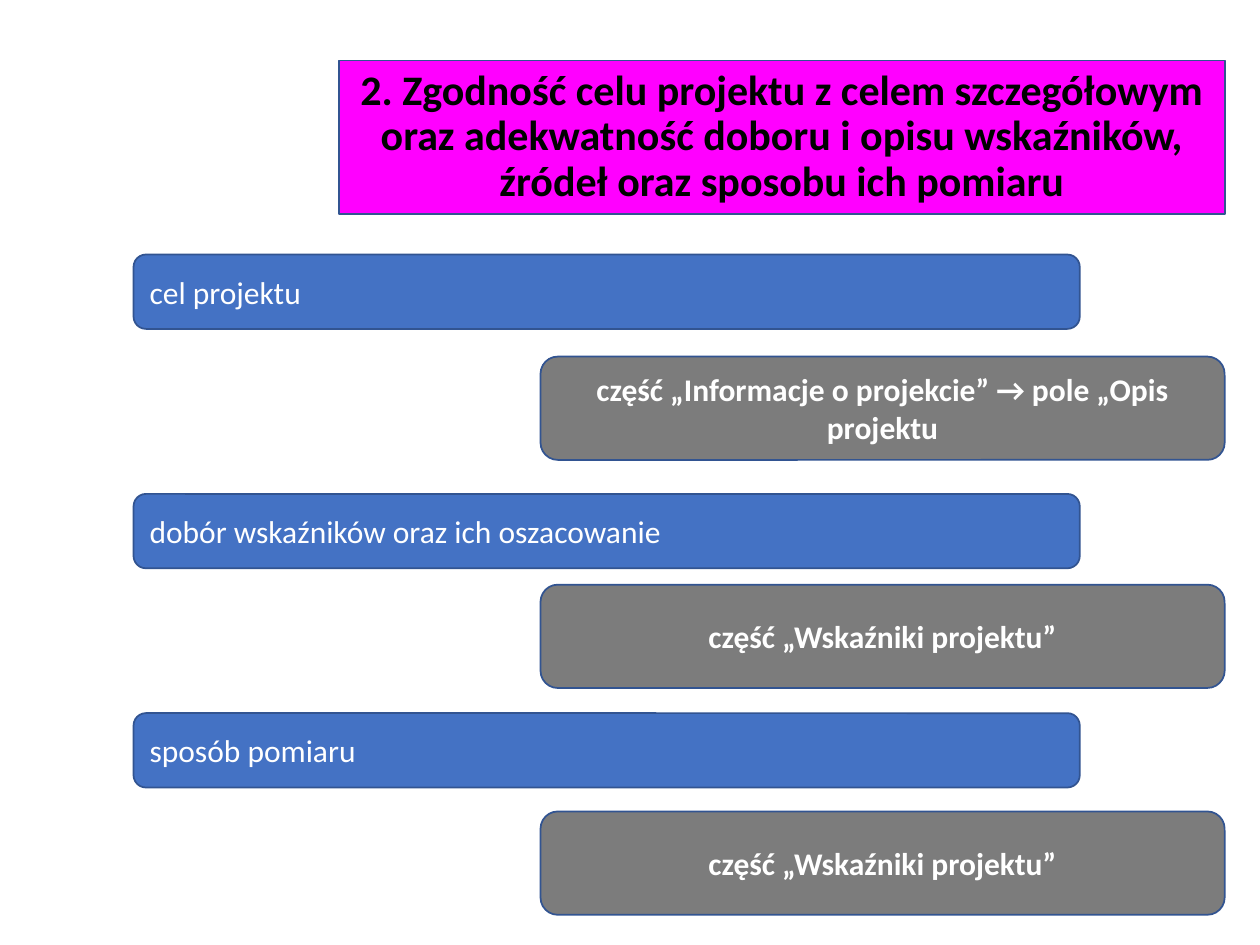
"""Build a slide that pairs each project criterion with its application section."""
from typing import NamedTuple

from lxml.etree import SubElement
from pptx import Presentation
from pptx.dml.color import RGBColor
from pptx.enum.shapes import MSO_SHAPE as Shape
from pptx.enum.text import MSO_ANCHOR as Anchor, MSO_AUTO_SIZE as AutoSize, PP_ALIGN as Align
from pptx.oxml.ns import qn
from pptx.util import Inches, Pt

BLUE = RGBColor(0x44, 0x72, 0xC4)
GRAY = RGBColor(0x7C, 0x7C, 0x7C)
MAGENTA = RGBColor(0xFF, 0x00, 0xFF)
OUTLINE = RGBColor(0x32, 0x54, 0x91)
WHITE = RGBColor(0xFF, 0xFF, 0xFF)
BLACK = RGBColor(0x00, 0x00, 0x00)
TITLE = ("2. Zgodność celu projektu z celem szczegółowym oraz adekwatność "
         "doboru i opisu wskaźników, źródeł oraz sposobu ich pomiaru")


class Style(NamedTuple):
    fill: RGBColor
    color: RGBColor
    size: int
    bold: bool
    align: Align


class Bar(NamedTuple):
    left: float
    width: float
    height: float
    style: Style


class Row(NamedTuple):
    criterion: str
    criterion_top: float
    section: str
    section_top: float


TITLE_STYLE = Style(MAGENTA, BLACK, 24, True, Align.CENTER)
CRITERION = Bar(1.06, 7.51, 0.59, Style(BLUE, WHITE, 18, False, Align.LEFT))
SECTION = Bar(4.29, 5.43, 0.82, Style(GRAY, WHITE, 18, True, Align.CENTER))
ROWS = [
    Row("cel projektu", 2.02, "część „Informacje o projekcie” → pole „Opis projektu", 2.83),
    Row("dobór wskaźników oraz ich oszacowanie", 3.92, "część „Wskaźniki projektu”", 4.64),
    Row("sposób pomiaru", 5.66, "część „Wskaźniki projektu”", 6.44),
]


def format_box(box, text: str, style: Style) -> None:
    """Apply fill, outline and text to a box."""
    box.fill.solid()
    box.fill.fore_color.rgb = style.fill
    box.line.color.rgb = OUTLINE
    box.line.width = Pt(1)
    frame = box.text_frame
    frame.word_wrap = True
    frame.auto_size = AutoSize.NONE
    frame.vertical_anchor = Anchor.MIDDLE
    para = frame.paragraphs[0]
    para.text = text
    para.alignment = style.align
    font = para.font
    font.name = "Calibri"
    font.size = Pt(style.size)
    font.bold = style.bold
    font.color.rgb = style.color


def add_title(page) -> None:
    """Turn the title placeholder into a rounded box."""
    title = page.shapes.title
    title.left, title.top = Inches(2.69), Inches(0.48)
    title.width, title.height = Inches(7.03), Inches(1.22)
    geometry = SubElement(title.element.spPr, qn("a:prstGeom"), prst="roundRect")
    SubElement(geometry, qn("a:avLst"))
    format_box(title, TITLE, TITLE_STYLE)
    para = title.text_frame.paragraphs[0]
    para.line_spacing = 0.9
    para.space_before = Pt(0)


def add_bar(page, bar: Bar, top: float, text: str) -> None:
    """Add one rounded bar."""
    box = page.shapes.add_shape(Shape.ROUNDED_RECTANGLE, Inches(bar.left), Inches(top),
                                Inches(bar.width), Inches(bar.height))
    box.shadow.inherit = False
    format_box(box, text, bar.style)


def main() -> None:
    """Build and save the deck."""
    deck = Presentation()
    deck.slide_width, deck.slide_height = Inches(10), Inches(7.5)
    page = deck.slides.add_slide(deck.slide_layouts.get_by_name("Title Only"))
    add_title(page)
    for row in ROWS:
        add_bar(page, CRITERION, row.criterion_top, row.criterion)
        add_bar(page, SECTION, row.section_top, row.section)
    deck.save("out.pptx")


if __name__ == "__main__":
    main()
